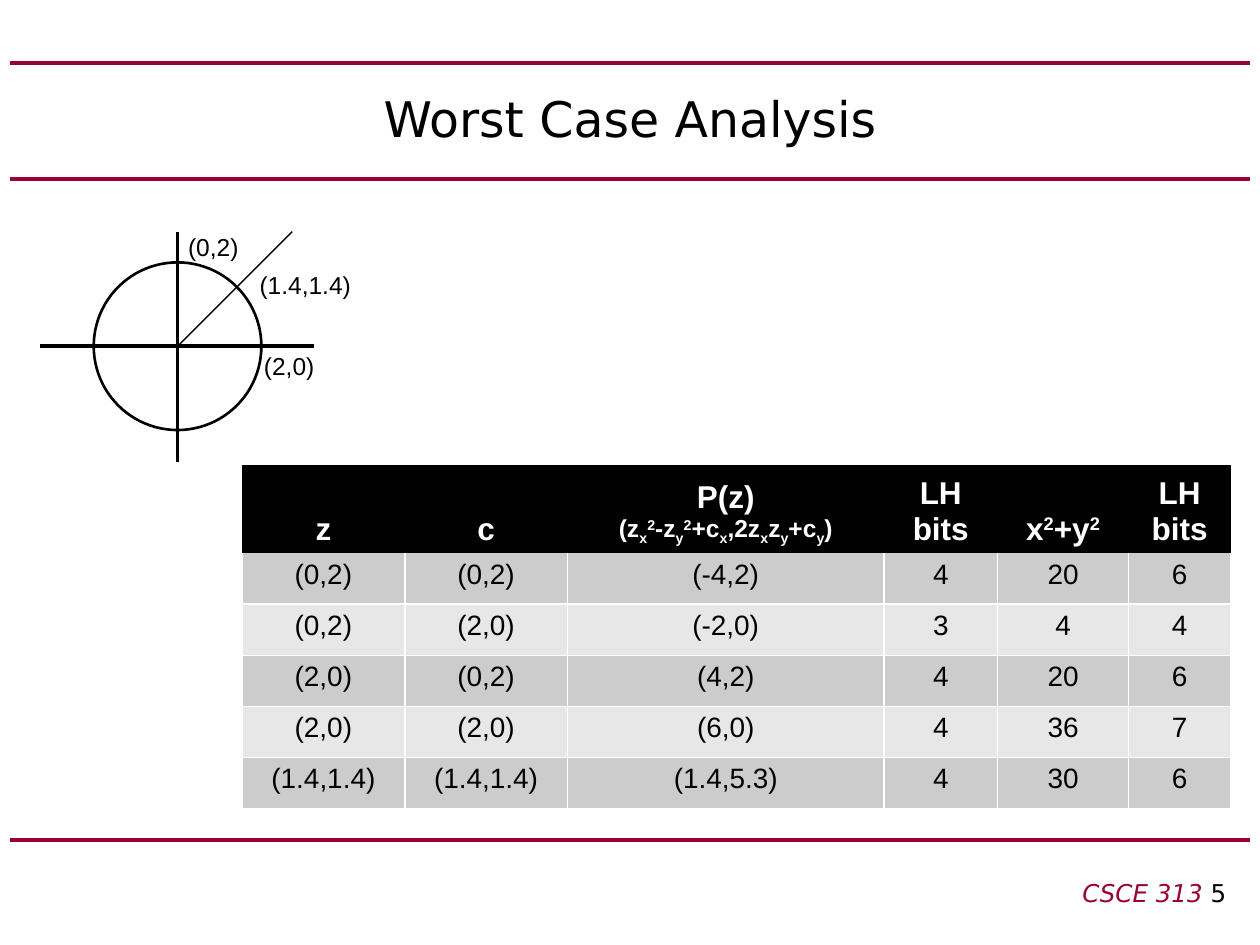
from lxml.etree import SubElement
from pptx import Presentation
from pptx.dml.color import RGBColor
from pptx.enum.shapes import MSO_CONNECTOR, MSO_SHAPE
from pptx.enum.text import MSO_ANCHOR, PP_ALIGN
from pptx.oxml.ns import qn
from pptx.util import Cm, Pt

HUES = {"wine": "990033", "ink": "000000", "white": "FFFFFF",
        "dark": "CCCCCC", "light": "E7E7E7"}
SHIFT = {"^": "30000", "_": "-25000"}
WIDTHS = [3.28, 3.28, 6.38, 2.29, 2.64, 2.06]
HEAD = [
    [("z", 18)],
    [("c", 18)],
    [("P(z)", 18), ("(z_x^2-z_y^2+c_x,2z_xz_y+c_y)", 14)],
    [("LH bits", 18)],
    [("x^2+y^2", 18)],
    [("LH bits", 18)],
]
ROWS = [
    ["(0,2)", "(0,2)", "(-4,2)", "4", "20", "6"],
    ["(0,2)", "(2,0)", "(-2,0)", "3", "4", "4"],
    ["(2,0)", "(0,2)", "(4,2)", "4", "20", "6"],
    ["(2,0)", "(2,0)", "(6,0)", "4", "36", "7"],
    ["(1.4,1.4)", "(1.4,1.4)", "(1.4,5.3)", "4", "30", "6"],
]


def hue(name):
    """Return the named colour."""
    return RGBColor.from_string(HUES[name])


def add_run(para, text, size, tint="ink", face="Arial", bold=False, slant=False):
    """Append one formatted run and return it."""
    run = para.add_run()
    run.text = text
    font = run.font
    font.size, font.name, font.bold, font.italic = Pt(size), face, bold, slant
    font.color.rgb = hue(tint)
    return run


def add_math(para, text, size):
    """Add bold white runs, raising after ^ and lowering after _."""
    plain, mark = "", ""
    for char in text + "\n":
        if mark:
            run = add_run(para, char, size, "white", bold=True)
            run._r.get_or_add_rPr().set("baseline", SHIFT[mark])
            mark = ""
        elif char in SHIFT or char == "\n":
            if plain:
                add_run(para, plain, size, "white", bold=True)
            plain, mark = "", char
        else:
            plain += char


def add_line(slide, start, end, tint, width):
    """Draw a straight line between two points."""
    line = slide.shapes.add_connector(
        MSO_CONNECTOR.STRAIGHT, *map(Cm, start + end))
    line.line.color.rgb = hue(tint)
    line.line.width = Pt(width)
    SubElement(line._element.spPr, qn("a:effectLst"))


def add_ring(slide, mid, radius):
    """Draw an unfilled circle around a centre."""
    left, top = mid[0] - radius, mid[1] - radius
    ring = slide.shapes.add_shape(
        MSO_SHAPE.OVAL, Cm(left), Cm(top), Cm(2 * radius), Cm(2 * radius))
    ring.shadow.inherit = False
    ring.fill.background()
    ring.line.color.rgb = hue("ink")
    ring.line.width = Pt(1.5)


def add_box(slide, area, align):
    """Add a wrapping text box and return its first paragraph."""
    frame = slide.shapes.add_textbox(*map(Cm, area)).text_frame
    frame.word_wrap = True
    para = frame.paragraphs[0]
    para.alignment = align
    return para


def set_title(slide, text):
    """Place and fill the title placeholder."""
    title = slide.shapes.title
    title.left, title.top = Cm(1.27), Cm(1.27)
    title.width, title.height = Cm(22.86), Cm(2.21)
    frame = title.text_frame
    frame.vertical_anchor = MSO_ANCHOR.MIDDLE
    para = frame.paragraphs[0]
    para.alignment = PP_ALIGN.CENTER
    add_run(para, text, 28, face="DejaVu Sans")


def set_edge(cell, side, tint=None):
    """Set one cell border, or clear it when no tint is given."""
    edge = SubElement(cell._tc.get_or_add_tcPr(), qn(f"a:ln{side}"), w="12700")
    if tint:
        fill = SubElement(edge, qn("a:solidFill"))
        SubElement(fill, qn("a:srgbClr"), val=HUES[tint])
    else:
        SubElement(edge, qn("a:noFill"))


def style_cell(cell, row):
    """Give a cell its borders and fill by row."""
    for side in "LRTB":
        bare = row == 0 or (row == 1 and side == "T")
        set_edge(cell, side, None if bare else "white")
    cell.fill.solid()
    tint = "dark" if row % 2 else "light"
    cell.fill.fore_color.rgb = hue(tint if row else "ink")


def add_grid(slide):
    """Add the table of worst cases."""
    grid = slide.shapes.add_table(
        len(ROWS) + 1, len(WIDTHS), Cm(4.88), Cm(9.37),
        Cm(sum(WIDTHS)), Cm(6.93)).table
    for col, width in zip(grid.columns, WIDTHS):
        col.width = Cm(width)
    for num, row in enumerate(grid.rows):
        row.height = Cm(1.03 if num else 1.78)
        for col, cell in enumerate(row.cells):
            style_cell(cell, num)
            frame = cell.text_frame
            if num:
                add_run(frame.paragraphs[0], ROWS[num - 1][col], 16)
            else:
                cell.vertical_anchor = MSO_ANCHOR.BOTTOM
                for pos, (text, size) in enumerate(HEAD[col]):
                    para = frame.add_paragraph() if pos else frame.paragraphs[0]
                    add_math(para, text, size)
            for para in frame.paragraphs:
                para.alignment = PP_ALIGN.CENTER


def add_plot(slide):
    """Draw the circle, its axes, the diagonal and the labels."""
    mid = (3.58, 6.98)
    add_line(slide, (mid[0], 4.67), (mid[0], 9.32), "ink", 2)
    add_line(slide, (6.32, mid[1]), (0.81, mid[1]), "ink", 2)
    add_ring(slide, mid, 1.69)
    for text, left, top, width in [("(2,0)", 4.88, 6.96, 1.9),
                                   ("(0,2)", 3.35, 4.55, 1.9),
                                   ("(1.4,1.4)", 4.62, 5.31, 3.07)]:
        para = add_box(slide, (left, top, width, 0.86), PP_ALIGN.CENTER)
        add_run(para, text, 14)
    add_line(slide, mid, (5.89, 4.67), "ink", 0.75)


def main():
    """Build and save the slide."""
    deck = Presentation()
    deck.slide_width, deck.slide_height = Cm(25.4), Cm(19.05)
    slide = deck.slides.add_slide(deck.slide_layouts[5])
    for top in (16.94, 3.61, 1.27):
        add_line(slide, (0.2, top), (25.2, top), "wine", 2.25)
    set_title(slide, "Worst Case Analysis")
    foot = add_box(slide, (9.53, 17.58, 15.44, 0.84), PP_ALIGN.RIGHT)
    add_run(foot, "CSCE 313 ", 14, "wine", "DejaVu Sans", slant=True)
    add_run(foot, "5", 14, face="DejaVu Sans")
    add_plot(slide)
    add_grid(slide)
    deck.save("out.pptx")


if __name__ == "__main__":
    main()
